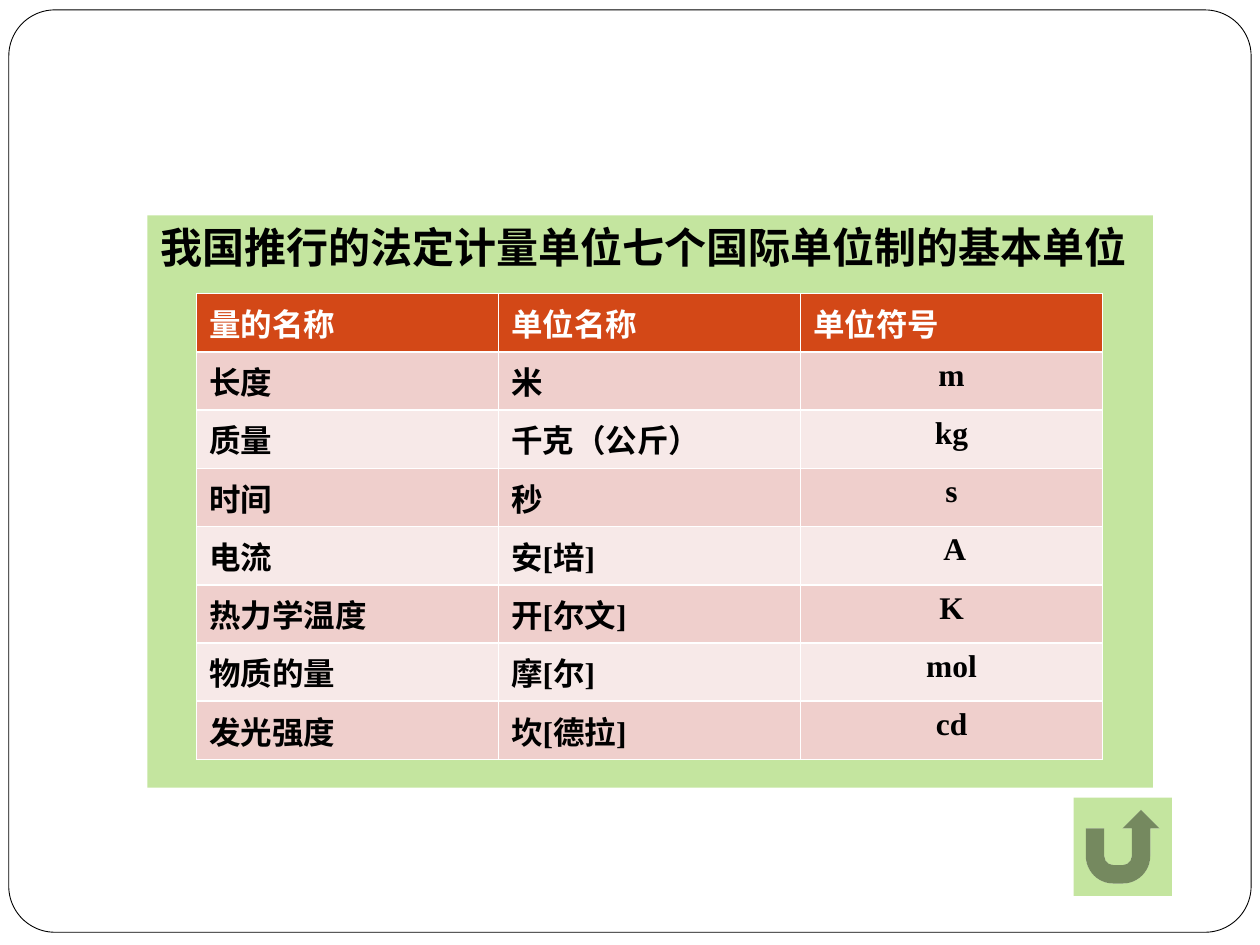
from dataclasses import dataclass
from pptx import Presentation
from pptx import util as u
from pptx.dml.color import RGBColor
from pptx.enum import shapes, text


@dataclass(frozen=True)
class Theme:
    font: str = "Times New Roman"
    head: int = 24
    body: int = 18
    ink: str = "000000"
    paper: str = "FFFFFF"
    panel: str = "C4E59F"
    top: str = "D34817"
    bands: tuple = ("EFCFCC", "F7E9E8")


@dataclass(frozen=True)
class Box:
    left: float
    top: float
    width: float
    height: float

    def area(self, x, y, w, h):
        return Box(self.left + self.width * x / 100,
                   self.top + self.height * y / 100,
                   self.width * w / 100, self.height * h / 100)

    def spots(self):
        return [u.Inches(v) for v in
                (self.left, self.top, self.width, self.height)]


THEME = Theme()
PAGE = Box(0, 0, 10, 7.5)
TITLE = "我国推行的法定计量单位七个国际单位制的基本单位"
UNITS = [
    ("量的名称", "单位名称", "单位符号"),
    ("长度", "米", "m"),
    ("质量", "千克（公斤）", "kg"),
    ("时间", "秒", "s"),
    ("电流", "安[培]", " A"),
    ("热力学温度", "开[尔文]", "K"),
    ("物质的量", "摩[尔]", "mol"),
    ("发光强度", "坎[德拉]", "cd"),
]


def paint(item, color):
    item.fill.solid()
    item.fill.fore_color.rgb = RGBColor.from_string(color)


def write(frame, words, size, color, align):
    frame.text = words
    para = frame.paragraphs[0]
    para.alignment = align
    for run in para.runs:
        run.font.name = THEME.font
        run.font.size = u.Pt(size)
        run.font.bold = True
        run.font.color.rgb = RGBColor.from_string(color)


def add_frame(slide, box):
    frame = slide.shapes.add_shape(
        shapes.MSO_SHAPE.ROUNDED_RECTANGLE, *box.spots())
    frame.adjustments[0] = 0.05
    frame.shadow.inherit = False
    paint(frame, THEME.paper)
    frame.line.color.rgb = RGBColor.from_string(THEME.ink)
    frame.line.width = u.Pt(0.5)
    slide.shapes.title.element.addprevious(frame.element)


def add_panel(slide, box):
    title = slide.shapes.title
    title.left, title.top, title.width, title.height = box.spots()
    paint(title, THEME.panel)
    frame = title.text_frame
    frame.word_wrap = True
    frame.auto_size = text.MSO_AUTO_SIZE.NONE
    frame.vertical_anchor = text.MSO_ANCHOR.TOP
    write(frame, TITLE, THEME.head, THEME.ink, text.PP_ALIGN.LEFT)
    add_units(slide, box.area(4.9, 13.65, 90.1, 80.85))


def add_units(slide, box):
    table = slide.shapes.add_table(
        len(UNITS), len(UNITS[0]), *box.spots()).table
    for r, row in enumerate(UNITS):
        fill = THEME.bands[(r - 1) % 2] if r else THEME.top
        color = THEME.ink if r else THEME.paper
        for c, words in enumerate(row):
            cell = table.cell(r, c)
            paint(cell, fill)
            align = text.PP_ALIGN.CENTER if r and c == 2 else text.PP_ALIGN.LEFT
            write(cell.text_frame, words, THEME.body, color, align)


def add_button(slide, box):
    button = slide.shapes.add_shape(
        shapes.MSO_SHAPE.ACTION_BUTTON_RETURN, *box.spots())
    button.shadow.inherit = False
    paint(button, THEME.panel)
    button.line.fill.background()


def main():
    deck = Presentation()
    deck.slide_width = u.Inches(PAGE.width)
    deck.slide_height = u.Inches(PAGE.height)
    slide = deck.slides.add_slide(deck.slide_layouts[5])
    add_frame(slide, PAGE.area(0.7, 1.05, 98.6, 97.6))
    add_panel(slide, PAGE.area(11.7, 22.8, 79.8, 60.55))
    add_button(slide, PAGE.area(85.2, 84.4, 7.8, 10.4))
    deck.save("out.pptx")


if __name__ == "__main__":
    main()
